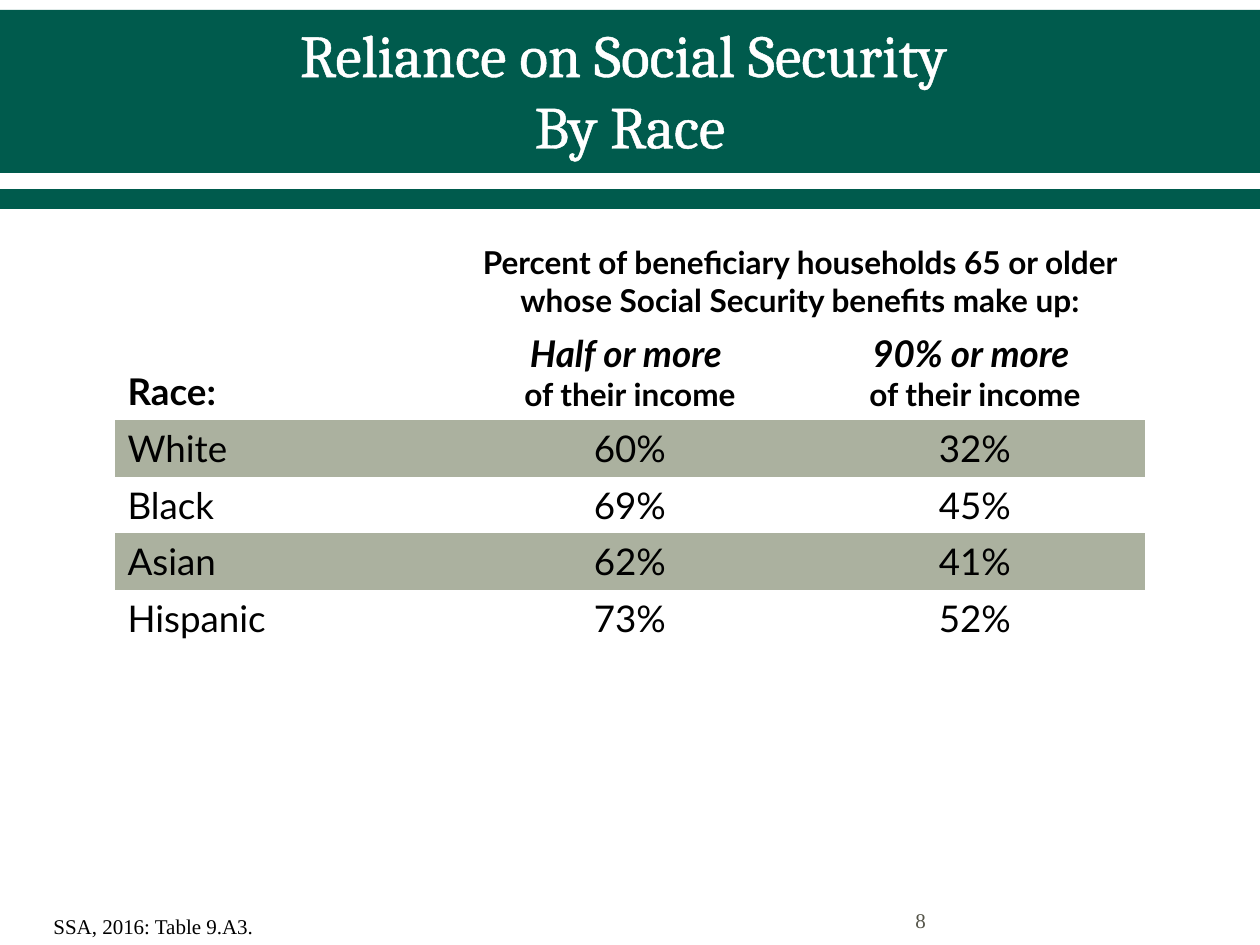
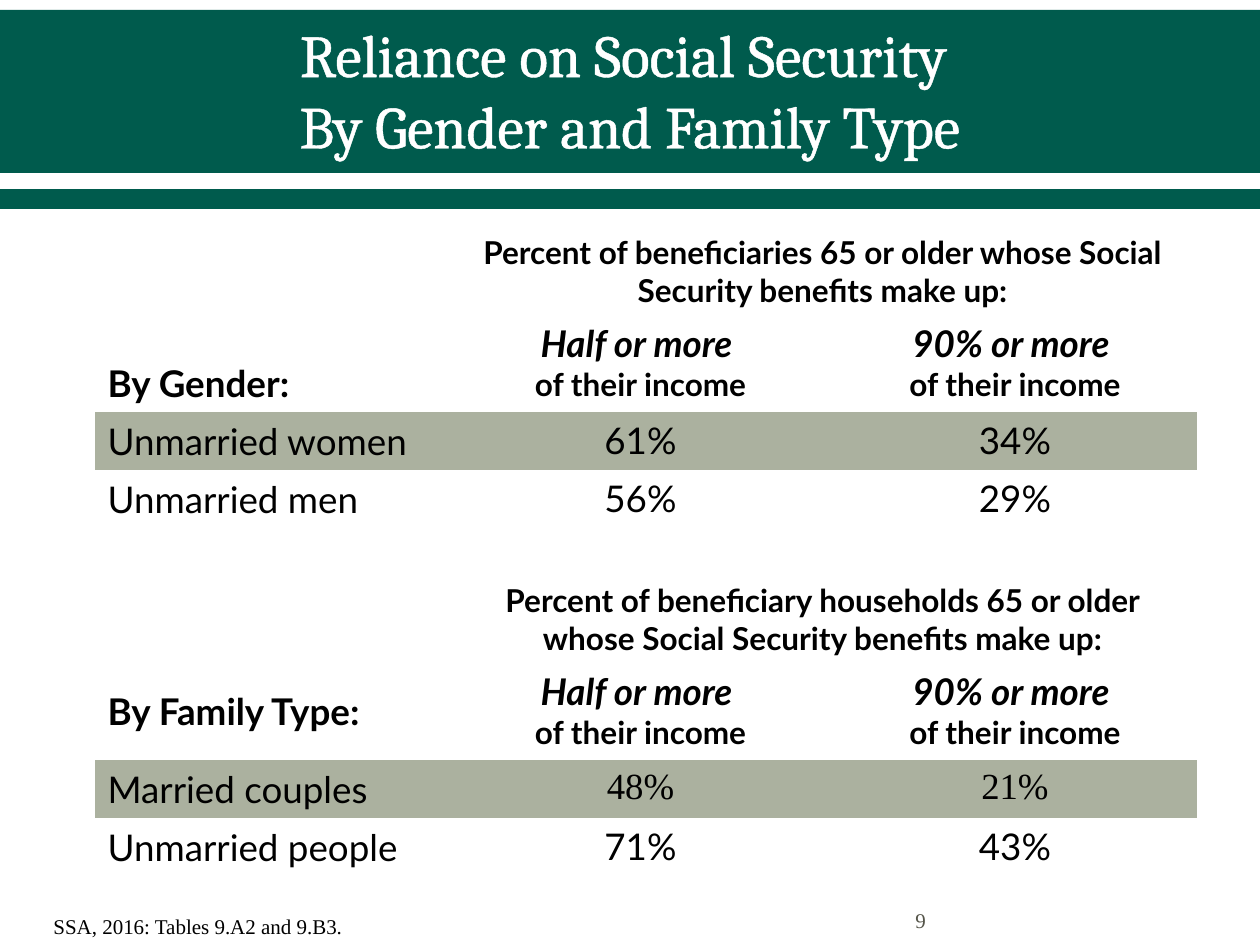
from dataclasses import dataclass

from lxml import etree
from pptx import Presentation
from pptx import util as u
from pptx.dml.color import RGBColor
from pptx.enum import shapes, text
from pptx.oxml.ns import qn

# Content: table rows are (kind, label, values...)
HOUSEHOLDS = ("Percent of beneficiary households 65 or older "
              "whose Social Security benefits make up:")
BENEFICIARIES = ("Percent of beneficiaries 65 or older "
                 "whose Social Security benefits make up:")
SHARES = ("Half or more ", "90% or more ")
SHARE_NOTE = "of their income"

SLIDES = [
    {
        "title": "Reliance on Social Security \nBy Race",
        "number": "8",
        "source": "SSA, 2016: Table 9.A3.",
        "table_at": (115, 237),
        "columns": (340, 350, 340),
        "rows": [
            ("heading", 88, HOUSEHOLDS),
            ("shares", 94, "Race:", "bottom"),
            ("shaded", 56, "White", "60%", "32%"),
            ("plain", 56, "Black", "69%", "45%"),
            ("shaded", 56, "Asian", "62%", "41%"),
            ("plain", 56, "Hispanic", "73%", "52%"),
        ],
    },
    {
        "title": "Reliance on Social Security \nBy Gender and Family Type",
        "number": "9",
        "source": "SSA, 2016: Tables 9.A2 and 9.B3.",
        "table_at": (95, 199),
        "columns": (353, 385, 364),
        "rows": [
            ("heading", 116, BENEFICIARIES),
            ("shares", 97, "By Gender:", "bottom"),
            ("shaded", 58, "Unmarried women", "61%", "34%"),
            ("plain", 58, "Unmarried men", "56%", "29%"),
            ("heading", 37, ""),
            ("heading", 97, HOUSEHOLDS),
            ("shares", 97, "By Family Type:", "middle"),
            ("shaded serif", 58, "Married couples", "48%", "21%"),
            ("plain", 58, "Unmarried people", "71%", "43%"),
        ],
    },
]


# Theme and page geometry
@dataclass(frozen=True)
class Theme:
    green: str = "005B4D"
    sage: str = "ABB19F"
    white: str = "FFFFFF"
    black: str = "000000"
    gray: str = "55554A"
    title_font: str = "Cambria"
    table_font: str = "Lato"
    note_font: str = "Times New Roman"
    title_size: int = 34
    label_size: int = 21
    heading_size: int = 18
    note_size: int = 12


THEME = Theme()
PAGE = (1260, 945)
BANDS = [(0, 10, 1260, 163), (0, 189, 1260, 20)]
TITLE_BOX = (63, 21, 1134, 136)
NUMBER_BOX = (903, 895, 294, 50)
SOURCE_BOX = (41, 907, 640, 38)
NO_GRID_STYLE = "{2D5ABB26-0587-4C30-8999-92F81FD0307C}"
ANCHORS = {
    "top": text.MSO_ANCHOR.TOP,
    "middle": text.MSO_ANCHOR.MIDDLE,
    "bottom": text.MSO_ANCHOR.BOTTOM,
}


def px(*lengths):
    return [u.Emu(round(length * 914400 / 126)) for length in lengths]


def write(paragraph, content, *, size=THEME.label_size, font=THEME.table_font,
          color=THEME.black, bold=False, italic=False, centered=False):
    """Fill a paragraph, turning newlines into line breaks; return its runs."""
    paragraph.alignment = (text.PP_ALIGN.CENTER if centered
                           else text.PP_ALIGN.LEFT)
    for index, line in enumerate(content.split("\n")):
        if index:
            paragraph.add_line_break()
        run = paragraph.add_run()
        run.text = line
        run.font.size = u.Pt(size)
        run.font.name = font
        run.font.bold = bold
        run.font.italic = italic
        run.font.color.rgb = RGBColor.from_string(color)
    return paragraph.runs


def add_bands(slide):
    for box in BANDS:
        band = slide.shapes.add_shape(shapes.MSO_SHAPE.RECTANGLE, *px(*box))
        band.shadow.inherit = False
        band.fill.solid()
        band.fill.fore_color.rgb = RGBColor.from_string(THEME.green)
        band.line.fill.background()


def format_title(slide, content):
    title = slide.shapes.title
    title.left, title.top, title.width, title.height = px(*TITLE_BOX)
    frame = title.text_frame
    frame.auto_size = text.MSO_AUTO_SIZE.NONE
    frame.vertical_anchor = ANCHORS["middle"]
    runs = write(frame.paragraphs[0], content, size=THEME.title_size,
                 font=THEME.title_font, color=THEME.white, centered=True)
    # White outline around the letters
    for run in runs:
        outline = etree.Element(qn("a:ln"), w=str(u.Pt(1.1)))
        fill = etree.SubElement(outline, qn("a:solidFill"))
        etree.SubElement(fill, qn("a:srgbClr"), val=THEME.white)
        run.font._element.insert(0, outline)
    # Bring the title in front of the bands
    slide.shapes._spTree.append(title._element)


def add_note(slide, box, content, color, anchor):
    frame = slide.shapes.add_textbox(*px(*box)).text_frame
    frame.word_wrap = True
    frame.vertical_anchor = ANCHORS[anchor]
    write(frame.paragraphs[0], content, size=THEME.note_size,
          font=THEME.note_font, color=color)


def write_cell(cell, content, anchor="top", **style):
    cell.vertical_anchor = ANCHORS[anchor]
    write(cell.text_frame.paragraphs[0], content, **style)


def fill_heading_row(cells, content):
    cells[1].merge(cells[2])
    if content:
        write_cell(cells[1], content, "bottom", size=THEME.heading_size,
                   bold=True, centered=True)


def fill_shares_row(cells, label, anchor):
    write_cell(cells[0], label, anchor, bold=True)
    for cell, share in zip(cells[1:], SHARES):
        write_cell(cell, share, bold=True, italic=True, centered=True)
        write(cell.text_frame.add_paragraph(), SHARE_NOTE,
              size=THEME.heading_size, bold=True, centered=True)


def fill_value_row(cells, kind, label, values):
    write_cell(cells[0], label, "middle")
    font = THEME.note_font if "serif" in kind else THEME.table_font
    for cell, value in zip(cells[1:], values):
        write_cell(cell, value, font=font, centered=True)
    if "shaded" in kind:
        for cell in cells:
            cell.fill.solid()
            cell.fill.fore_color.rgb = RGBColor.from_string(THEME.sage)


def add_reliance_table(slide, position, columns, rows):
    height = sum(row[1] for row in rows)
    frame = slide.shapes.add_table(len(rows), len(columns),
                                   *px(*position, sum(columns), height))
    table = frame.table
    table.first_row = table.horz_banding = False
    table._tbl.tblPr.find(qn("a:tableStyleId")).text = NO_GRID_STYLE
    for column, width in zip(table.columns, px(*columns)):
        column.width = width

    for table_row, (kind, row_height, label, *rest) in zip(table.rows, rows):
        table_row.height = px(row_height)[0]
        cells = list(table_row.cells)
        for cell in cells:
            cell.fill.background()
        if kind == "heading":
            fill_heading_row(cells, label)
        elif kind == "shares":
            fill_shares_row(cells, label, *rest)
        else:
            fill_value_row(cells, kind, label, rest)
        # Small type in empty cells keeps their rows low
        for cell in cells:
            if not cell.text_frame.text:
                paragraph = cell.text_frame.paragraphs[0]
                ending = paragraph._p.get_or_add_endParaRPr()
                ending.set("sz", str(THEME.note_size * 100))


def main():
    presentation = Presentation()
    presentation.slide_width, presentation.slide_height = px(*PAGE)
    title_only = presentation.slide_layouts[5]
    for content in SLIDES:
        slide = presentation.slides.add_slide(title_only)
        add_bands(slide)
        format_title(slide, content["title"])
        add_reliance_table(slide, content["table_at"], content["columns"],
                           content["rows"])
        add_note(slide, NUMBER_BOX, content["number"], THEME.gray, "middle")
        add_note(slide, SOURCE_BOX, content["source"], THEME.black, "top")
    presentation.save("out.pptx")


if __name__ == "__main__":
    main()
